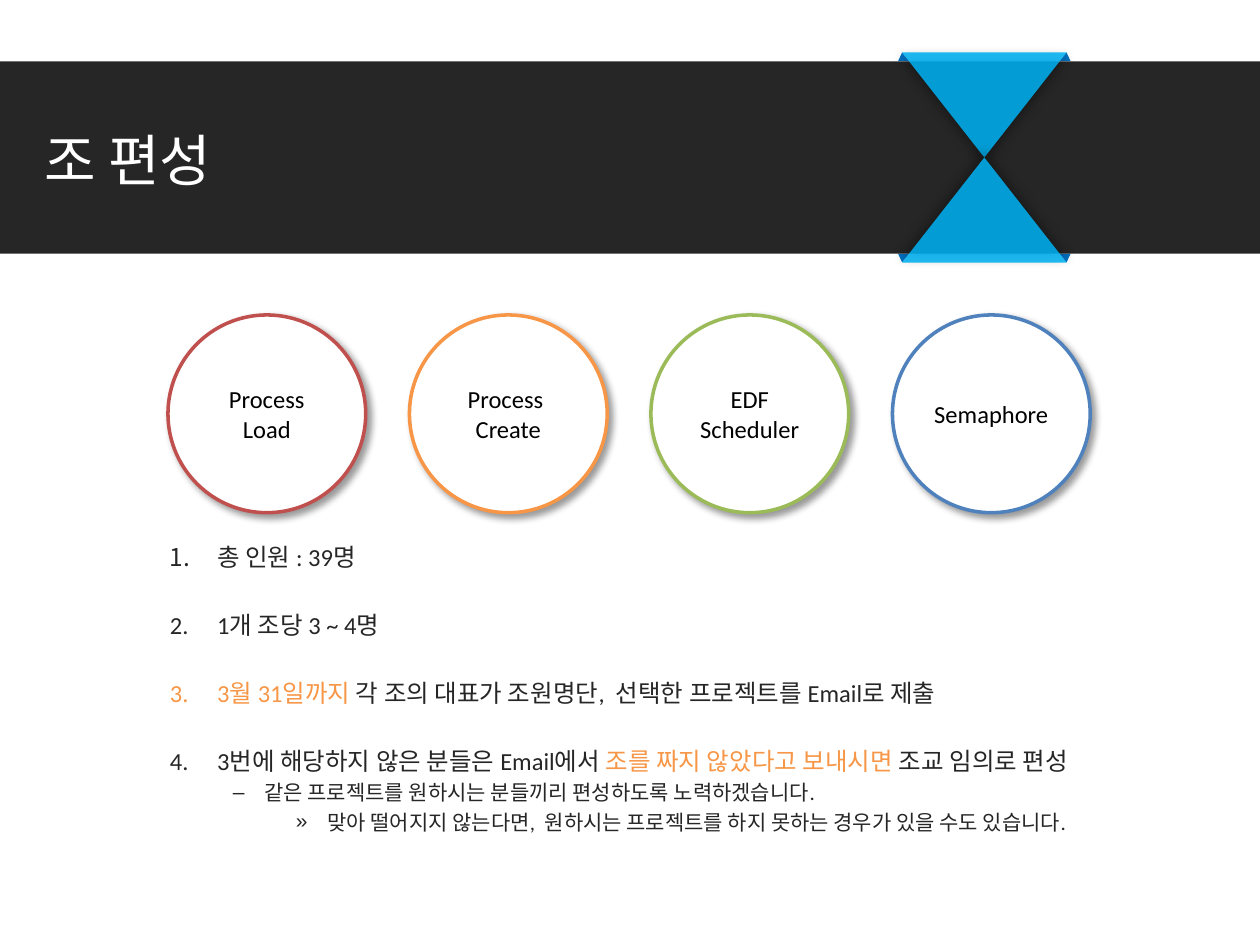
from lxml.etree import SubElement
from pptx import Presentation
from pptx.dml.color import RGBColor
from pptx.enum.shapes import MSO_SHAPE
from pptx.enum.text import MSO_ANCHOR, PP_ALIGN
from pptx.oxml.ns import qn
from pptx.util import Pt


def paint(text):
    return RGBColor.from_string(text)


def node(parent, tag, **attrs):
    return SubElement(parent, qn(tag), {k: str(v) for k, v in attrs.items()})


class Deck:
    dark, blue, cyan, orange = "262626", "0070C0", "00B0F0", "F79646"
    font = "Calibri"

    def __init__(self, slide):
        self.slide = slide
        self.shapes = slide.shapes

    def style(self, shape, fill, line=None):
        shape.shadow.inherit = False
        shape.fill.solid()
        shape.fill.fore_color.rgb = paint(fill)
        if line:
            shape.line.color.rgb = paint(line)
            shape.line.width = Pt(2)
        else:
            shape.line.fill.background()
        return shape

    def shape(self, kind, left, top, width, height, fill, line=None):
        box = self.shapes.add_shape(kind, Pt(left), Pt(top), Pt(width), Pt(height))
        return self.style(box, fill, line)

    def poly(self, points, fill):
        first, *rest = [(Pt(x), Pt(y)) for x, y in points]
        form = self.shapes.build_freeform(*first)
        form.add_line_segments(rest, close=True)
        return self.style(form.convert_to_shape(), fill)

    def shade(self, shape, blur, angle):
        effects = shape._element.spPr.find(qn("a:effectLst"))
        outer = node(effects, "a:outerShdw", blurRad=Pt(blur), dist=Pt(3),
                     dir=angle * 60000, algn="ctr", rotWithShape=0)
        color = node(outer, "a:srgbClr", val="000000")
        node(color, "a:alpha", val=40000)

    def fade(self, shape, percent):
        color = shape._element.spPr.find(qn("a:solidFill"))[0]
        node(color, "a:alpha", val=percent * 1000)

    def run(self, para, text, color, size, name=font):
        run = para.add_run()
        run.text = text
        values = {"size": Pt(size), "name": name}
        for key, value in values.items():
            setattr(run.font, key, value)
        run.font.color.rgb = paint(color)

    def frame(self, shape, pad=7.2, anchor=MSO_ANCHOR.TOP):
        frame = shape.text_frame
        values = {"word_wrap": True, "vertical_anchor": anchor,
                  "margin_left": Pt(pad), "margin_right": Pt(pad)}
        for key, value in values.items():
            setattr(frame, key, value)
        return frame

    def title(self, text, left, top, width, height):
        box = self.shapes.title
        place = {"left": left, "top": top, "width": width, "height": height}
        for key, value in place.items():
            setattr(box, key, Pt(value))
        para = self.frame(box, anchor=MSO_ANCHOR.MIDDLE).paragraphs[0]
        para.alignment = PP_ALIGN.LEFT
        self.run(para, text, "FFFFFF", 32, "Arial")
        self.shapes._spTree.append(box._element)  # bring to front

    def circle(self, lines, left, top, size, color):
        ring = self.shape(MSO_SHAPE.OVAL, left, top, size, size, "FFFFFF", color)
        self.shade(ring, 4, 45)
        frame = self.frame(ring, 5, MSO_ANCHOR.MIDDLE)
        for i, line in enumerate(lines):
            para = frame.add_paragraph() if i else frame.paragraphs[0]
            para.alignment = PP_ALIGN.CENTER
            self.run(para, line, "000000", 14)

    def list(self, items, left, top, width, height):
        box = self.shapes.add_textbox(Pt(left), Pt(top), Pt(width), Pt(height))
        frame = self.frame(box)
        for i, (kind, runs) in enumerate(items):
            margin, hang, gap, size, mark = kinds[kind]
            para = frame.add_paragraph() if i else frame.paragraphs[0]
            para.space_before = Pt(gap if i else 0)
            props = para._p.get_or_add_pPr()
            props.set("marL", str(Pt(margin)))
            props.set("indent", str(Pt(-hang)))
            if mark:
                node(props, "a:buFont", typeface="Arial")
                node(props, "a:buChar", char=mark)
            else:
                node(props, "a:buFont", typeface="+mj-lt")
                node(props, "a:buAutoNum", type="arabicPeriod")
            for text, color in runs:
                self.run(para, text, color, size)


# margin, hanging indent, space before, text size, bullet
kinds = {
    "step": (99, 27, 22.1, 14, None),
    "dash": (126, 18, 2.4, 12, "–"),
    "arrow": (162, 18, 2.4, 12, "»"),
}

show = Presentation()
show.slide_width, show.slide_height = Pt(720), Pt(540)
deck = Deck(show.slides.add_slide(show.slide_layouts[5]))
dark, orange = deck.dark, deck.orange

# Ribbon: folded corners, band and two triangles around one centre
midx, midy = 562.5, 90
for side in (1, -1):
    for end in (-1, 1):
        edge = midy + end * 55
        deck.poly([(midx + side * 47, midy + end * 60),
                   (midx + side * 49.3, edge),
                   (midx + side * 43, edge)], deck.blue)
deck.shape(MSO_SHAPE.RECTANGLE, 0, midy - 55, 720, 110, dark)
for top, angle in ((midy - 60, 90), (midy, 270)):
    wedge = deck.shape(MSO_SHAPE.ISOSCELES_TRIANGLE, midx - 47, top, 94, 60, deck.cyan)
    deck.fade(wedge, 87)
    deck.shade(wedge, 7, angle)
    if top < midy:
        wedge._element.spPr.find(qn("a:xfrm")).set("flipV", "1")

deck.title("조 편성", 18, 66, 426, 50.4)

# Numbered notes
deck.list([
    ("step", [("총 인원 : 39명", dark)]),
    ("step", [("1개 조당 3 ~ 4명", dark)]),
    ("step", [("3월 31일까지 ", orange),
              ("각 조의 대표가 조원명단,  선택한 프로젝트를 Email로 제출", dark)]),
    ("step", [("3번에 해당하지 않은 분들은 Email에서 ", dark),
              ("조를 짜지 않았다고 보내시면 ", orange),
              ("조교 임의로 편성", dark)]),
    ("dash", [("같은 프로젝트를 원하시는 분들끼리 편성하도록 노력하겠습니다.", dark)]),
    ("arrow", [("맞아 떨어지지 않는다면,  원하시는 프로젝트를 하지 못하는 "
                "경우가 있을 수도 있습니다.", dark)]),
], 18, 306, 675, 198)

# Project circles
teams = [
    (["Process Load"], "C0504D"),
    (["Process ", "Create"], orange),
    (["EDF", "Scheduler"], "9BBB59"),
    (["Semaphore"], "4F81BD"),
]
for i, (lines, color) in enumerate(teams):
    deck.circle(lines, 96 + 138 * i, 180, 113, color)

show.save("out.pptx")
